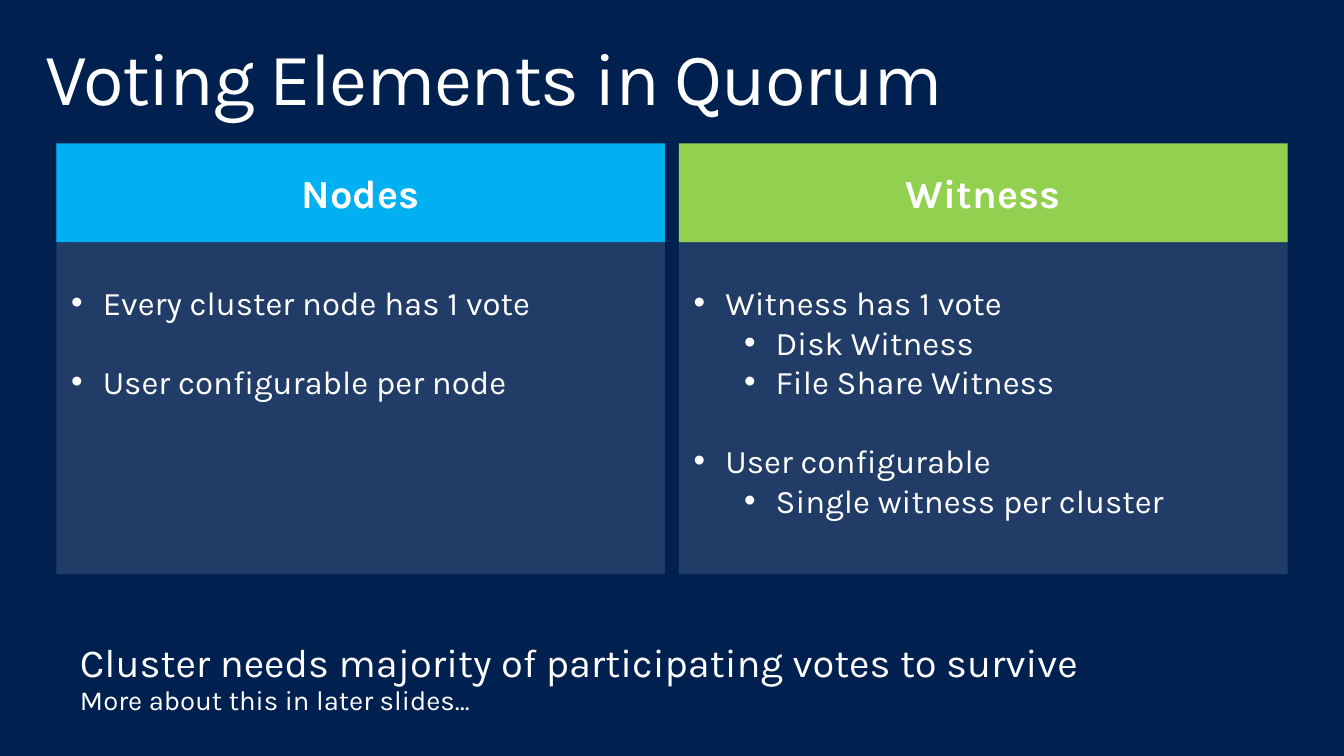
"""Builds the slide on the voting elements in a cluster quorum."""
from dataclasses import dataclass

from lxml.etree import SubElement
from pptx import Presentation
from pptx.dml.color import RGBColor
from pptx.enum.shapes import MSO_SHAPE as Shape
from pptx.enum.text import MSO_ANCHOR as Anchor, PP_ALIGN as Align
from pptx.oxml.ns import qn
from pptx.util import Inches, Pt

FONT = "Karla"
COLORS = {"bg": "002050", "text": "FFFFFF", "nodes": "00B0F0", "witness": "92D050"}
LEFT, PITCH, WIDTH = 0.57, 6.3, 6.16
INDENTS = (0.32, 0.83)


@dataclass
class Item:
    text: str
    level: int = 0


@dataclass
class Column:
    heading: str
    color: str
    items: list[Item]


COLUMNS = [
    Column("Nodes", "nodes", [
        Item("Every cluster node has 1 vote"),
        Item("User configurable per node"),
    ]),
    Column("Witness", "witness", [
        Item("Witness has 1 vote"),
        Item("Disk Witness", 1),
        Item("File Share Witness", 1),
        Item("User configurable"),
        Item("Single witness per cluster", 1),
    ]),
]


def rgb(name: str) -> RGBColor:
    return RGBColor.from_string(COLORS[name])


def place(sp, x: float, y: float, w: float, h: float) -> None:
    sp.left, sp.top, sp.width, sp.height = map(Inches, (x, y, w, h))


def set_frame(tf, side: float, top: float, bottom: float, anchor=Anchor.TOP) -> None:
    tf.word_wrap = True
    tf.margin_left = tf.margin_right = Inches(side)
    tf.margin_top, tf.margin_bottom = Inches(top), Inches(bottom)
    tf.vertical_anchor = anchor


def add_run(p, text: str, size: float, bold: bool = False):
    r = p.add_run()
    r.text = text
    r.font.name, r.font.size, r.font.bold = FONT, Pt(size), bold
    r.font.color.rgb = rgb("text")
    return r


def add_rect(s, x: float, y: float, h: float, color: str):
    sp = s.shapes.add_shape(Shape.RECTANGLE, *map(Inches, (x, y, WIDTH, h)))
    sp.shadow.inherit = False
    sp.fill.solid()
    sp.fill.fore_color.rgb = rgb(color)
    sp.line.fill.background()
    return sp


def add_text(s, x: float, y: float, w: float, h: float):
    return s.shapes.add_textbox(*map(Inches, (x, y, w, h))).text_frame


def add_bullet(p, item: Item) -> None:
    p.level = item.level
    pPr = p._p.get_or_add_pPr()
    pPr.set("marL", str(Inches(INDENTS[item.level])))
    pPr.set("indent", str(Inches(-INDENTS[0])))
    SubElement(pPr, qn("a:buFont"), typeface="Arial")
    SubElement(pPr, qn("a:buChar"), char="•")
    add_run(p, item.text, 24)


def add_column(s, x: float, column: Column) -> None:
    panel = add_rect(s, x, 1.47, 4.34, "text")
    color = panel.fill._xPr.find(".//" + qn("a:srgbClr"))
    SubElement(color, qn("a:alpha"), val="13000")

    tf = add_rect(s, x, 1.45, 1, column.color).text_frame
    set_frame(tf, 0.15, 0, 0, Anchor.MIDDLE)
    p = tf.paragraphs[0]
    p.alignment = Align.CENTER
    add_run(p, column.heading, 29, bold=True)

    tf = add_text(s, x, 2.78, WIDTH, 2.6)
    set_frame(tf, 0.15, 0.08, 0)
    for i, item in enumerate(column.items):
        p = tf.add_paragraph() if i else tf.paragraphs[0]
        if i and item.level == 0:
            p.space_before = Pt(28.8)
        add_bullet(p, item)


def add_title(s, text: str) -> None:
    sp = s.shapes.title
    place(sp, 0.3, 0.32, 13, 1)
    set_frame(sp.text_frame, 0.16, 0.1, 0.1)
    p = sp.text_frame.paragraphs[0]
    p.alignment, p.line_spacing = Align.LEFT, 0.9
    r = add_run(p, text, 54)
    r.font._element.set("spc", "-100")


def add_summary(s) -> None:
    tf = add_text(s, 0.65, 6.41, 12.44, 0.94)
    set_frame(tf, 0.16, 0.1, 0.1)
    p = tf.paragraphs[0]
    p.line_spacing = 0.9
    add_run(p, "Cluster needs majority of participating votes to survive", 29)
    p.add_line_break()
    add_run(p, "More about this in later slides…", 20)


def main() -> None:
    prs = Presentation()
    prs.slide_width, prs.slide_height = Inches(13.6), Inches(7.65)
    s = prs.slides.add_slide(prs.slide_layouts[5])
    s.background.fill.solid()
    s.background.fill.fore_color.rgb = rgb("bg")
    add_title(s, "Voting Elements in Quorum")
    for i, column in enumerate(COLUMNS):
        add_column(s, LEFT + i * PITCH, column)
    add_summary(s)
    prs.save("out.pptx")


if __name__ == "__main__":
    main()
